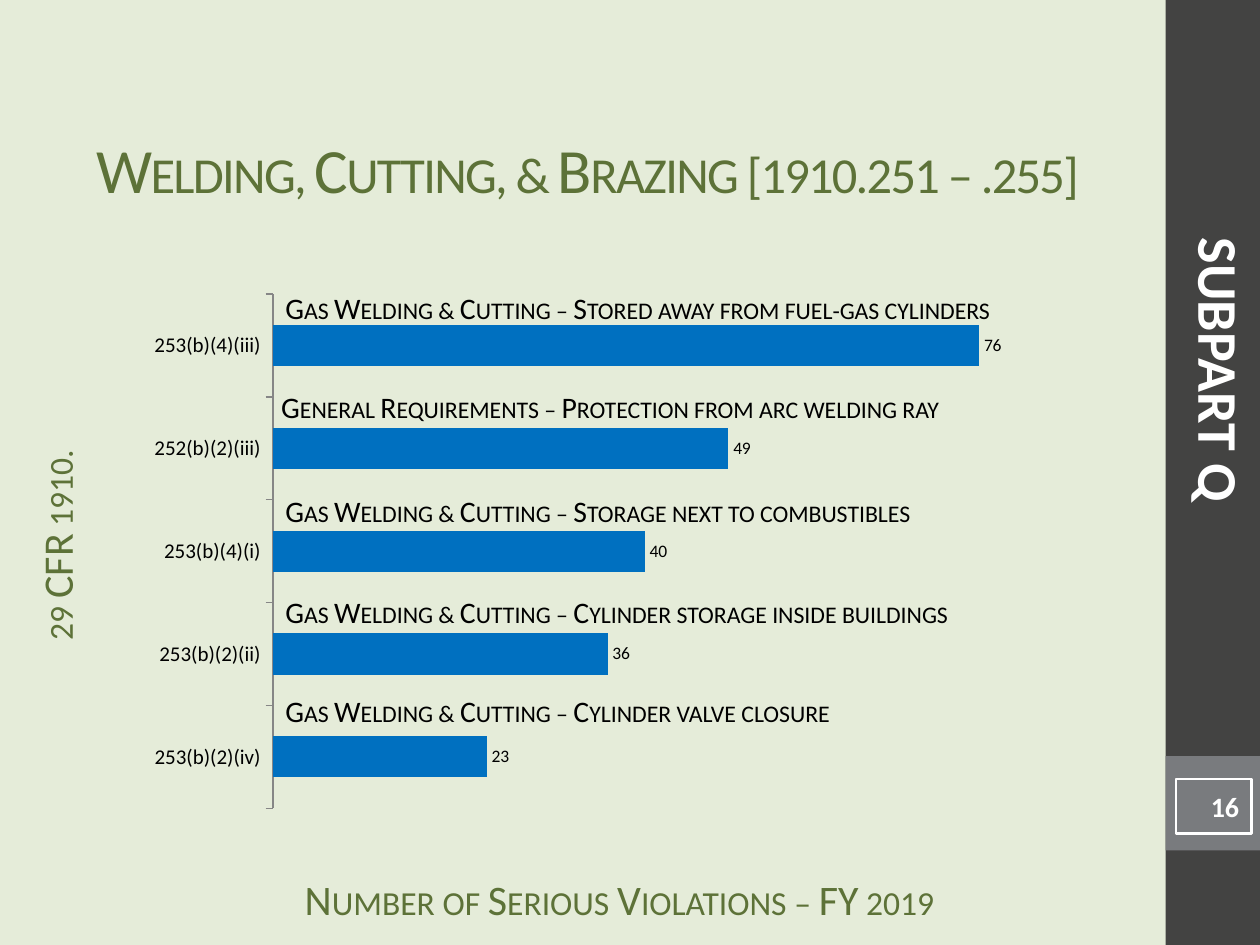
"""Build the slide on serious welding, cutting and brazing violations."""
import dataclasses

import pptx
import pptx.chart.data
import pptx.dml.color
import pptx.enum.chart
import pptx.enum.text
import pptx.util

RGBColor = pptx.dml.color.RGBColor
PP_ALIGN = pptx.enum.text.PP_ALIGN
MSO_ANCHOR = pptx.enum.text.MSO_ANCHOR
RECT = pptx.enum.shapes.MSO_SHAPE.RECTANGLE

PAPER = RGBColor(0xE5, 0xEC, 0xD9)
CHARCOAL = RGBColor(0x43, 0x43, 0x42)
GRAY = RGBColor(0x79, 0x7B, 0x7E)
AXIS = RGBColor(0x86, 0x86, 0x86)
OLIVE = RGBColor(0x5D, 0x72, 0x38)
BLUE = RGBColor(0x00, 0x70, 0xC0)
BLACK = RGBColor(0, 0, 0)
WHITE = RGBColor(0xFF, 0xFF, 0xFF)

FONT = "Calibri"
WIDTH, HEIGHT = pptx.util.Inches(10), pptx.util.Inches(7.5)
COLUMNS, ROWS = 120, 90


@dataclasses.dataclass(frozen=True)
class Box:
    """A rectangle in grid columns and rows."""
    col: float
    row: float
    cols: float
    rows: float

    def emu(self) -> tuple[int, int, int, int]:
        """Return left, top, width and height in EMU."""
        x, y = WIDTH / COLUMNS, HEIGHT / ROWS
        return (round(self.col * x), round(self.row * y),
                round(self.cols * x), round(self.rows * y))


@dataclasses.dataclass(frozen=True)
class Style:
    """Character and paragraph format of a text."""
    size: float
    color: RGBColor
    align: PP_ALIGN = PP_ALIGN.LEFT
    bold: bool = False
    caps: dict = dataclasses.field(default_factory=dict)


@dataclasses.dataclass(frozen=True)
class Label:
    """A text box with its style, rotation and frame format."""
    text: str
    box: Box
    style: Style
    rotation: float = 0
    frame: dict = dataclasses.field(default_factory=dict)


@dataclasses.dataclass(frozen=True)
class Violation:
    """A cited standard, its count and its caption."""
    standard: str
    count: int
    caption: str
    box: Box


SMALL = {"cap": "small"}
TITLE = Style(36, OLIVE, caps={**SMALL, "spc": "-100"})
AXIS_TITLE = Style(24, OLIVE, PP_ALIGN.CENTER, caps=SMALL)
CAPTION = Style(17, BLACK, caps=SMALL)
SIDE = Style(32, WHITE, PP_ALIGN.CENTER, bold=True)
NUMBER = Style(16, WHITE, PP_ALIGN.RIGHT, bold=True)
FLUSH_TOP = {"margin_top": 0}

BANDS = [(Box(111, 0, 9, 90), CHARCOAL), (Box(111, 72, 9, 9), GRAY)]
CHART = Box(13, 27, 85.5, 51)
NUMBER_BOX = Box(112, 74.2, 7.2, 5.2)

LABELS = [
    Label("Number of Serious Violations – FY 2019", Box(25, 83.2, 68, 4),
          AXIS_TITLE, frame=FLUSH_TOP),
    Label("29 CFR 1910.", Box(-18.7, 48.4, 50.3, 7), AXIS_TITLE, 270, FLUSH_TOP),
    Label("Welding, Cutting, & Brazing [1910.251 – .255]", Box(8, 7, 102.7, 18),
          TITLE, frame={"vertical_anchor": MSO_ANCHOR.MIDDLE}),
    Label("SUBPART Q ", Box(80.3, 32, 71.8, 7.7), SIDE, 90),
]

VIOLATIONS = [
    Violation("253(b)(2)(iv)", 23, "Gas Welding & Cutting – Cylinder valve closure",
              Box(26, 65.4, 57.2, 4.7)),
    Violation("253(b)(2)(ii)", 36, "Gas Welding & Cutting – Cylinder storage inside buildings",
              Box(26, 56, 67.7, 4.7)),
    Violation("253(b)(4)(i)", 40, "Gas Welding & Cutting – Storage next to combustibles",
              Box(26, 46.3, 83, 4.7)),
    Violation("252(b)(2)(iii)", 49, "General Requirements – Protection from arc welding ray",
              Box(25.6, 36.4, 67.7, 4.7)),
    Violation("253(b)(4)(iii)", 76, "Gas Welding & Cutting – Stored away from fuel-gas cylinders",
              Box(26, 27, 72.5, 4.7)),
]


def apply(target: object, values: dict) -> None:
    """Set each named attribute on the target."""
    for name, value in values.items():
        setattr(target, name, value)


def write(tf: pptx.text.text.TextFrame, text: str, style: Style) -> None:
    """Write one styled paragraph into a text frame."""
    p = tf.paragraphs[0]
    p.alignment = style.align
    r = p.add_run()
    r.text = text
    apply(r.font, {"name": FONT, "size": pptx.util.Pt(style.size), "bold": style.bold})
    r.font.color.rgb = style.color
    for name, value in style.caps.items():
        r.font._element.set(name, value)


def add_label(s: pptx.slide.Slide, label: Label) -> None:
    """Add a wrapped text box."""
    sp = s.shapes.add_textbox(*label.box.emu())
    sp.rotation = label.rotation
    apply(sp.text_frame, {"word_wrap": True, **label.frame})
    write(sp.text_frame, label.text, label.style)


def add_band(s: pptx.slide.Slide, box: Box, color: RGBColor) -> None:
    """Add a filled rectangle without an outline."""
    sp = s.shapes.add_shape(RECT, *box.emu())
    sp.shadow.inherit = False
    sp.fill.solid()
    sp.fill.fore_color.rgb = color
    sp.line.fill.background()


def add_number(s: pptx.slide.Slide, box: Box, text: str) -> None:
    """Add the outlined slide number."""
    sp = s.shapes.add_shape(RECT, *box.emu())
    sp.shadow.inherit = False
    sp.fill.background()
    sp.line.color.rgb = WHITE
    sp.line.width = pptx.util.Pt(1.5)
    sp.text_frame.vertical_anchor = MSO_ANCHOR.MIDDLE
    write(sp.text_frame, text, NUMBER)


def add_violation_chart(s: pptx.slide.Slide, box: Box, violations: list[Violation]) -> None:
    """Add the bar chart of violations by standard."""
    enums = pptx.enum.chart
    data = pptx.chart.data.CategoryChartData()
    data.categories = [v.standard for v in violations]
    data.add_series("Series 1", [v.count for v in violations])
    chart = s.shapes.add_chart(enums.XL_CHART_TYPE.BAR_CLUSTERED, *box.emu(), data).chart
    apply(chart, {"has_legend": False, "has_title": False})
    apply(chart.font, {"name": FONT, "size": pptx.util.Pt(10)})
    chart.font.color.rgb = BLACK
    apply(chart.value_axis, {"visible": False, "has_major_gridlines": False,
                             "minimum_scale": 0, "maximum_scale": 80})
    axis = chart.category_axis
    axis.major_tick_mark = enums.XL_TICK_MARK.OUTSIDE
    axis.format.line.color.rgb = AXIS
    apply(axis.tick_labels.font, {"name": FONT, "size": pptx.util.Pt(12)})
    plot = chart.plots[0]
    apply(plot, {"gap_width": 150, "vary_by_categories": False, "has_data_labels": True})
    apply(plot.data_labels, {"show_value": True,
                             "position": enums.XL_LABEL_POSITION.OUTSIDE_END})
    fill = plot.series[0].format.fill
    fill.solid()
    fill.fore_color.rgb = BLUE


def main() -> None:
    """Build and save the slide."""
    prs = pptx.Presentation()
    apply(prs, {"slide_width": WIDTH, "slide_height": HEIGHT})
    s = prs.slides.add_slide(prs.slide_layouts[6])
    s.background.fill.solid()
    s.background.fill.fore_color.rgb = PAPER
    for box, color in BANDS:
        add_band(s, box, color)
    add_violation_chart(s, CHART, VIOLATIONS)
    add_number(s, NUMBER_BOX, "16")
    captions = [Label(v.caption, v.box, CAPTION) for v in VIOLATIONS]
    for label in LABELS + captions:
        add_label(s, label)
    prs.save("out.pptx")


if __name__ == "__main__":
    main()
